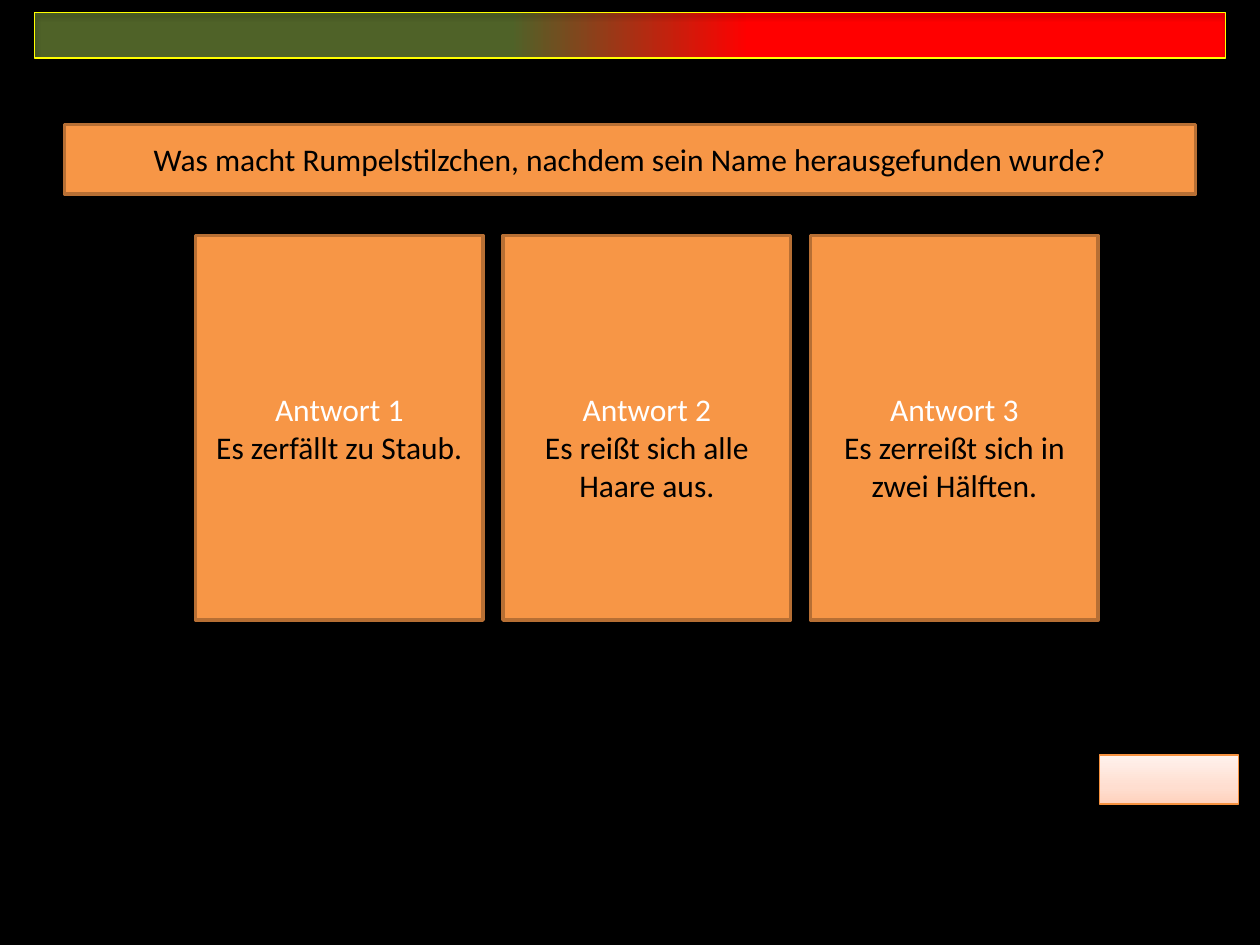
from dataclasses import dataclass

from lxml.etree import SubElement
from pptx import Presentation
from pptx.dml.color import RGBColor
from pptx.enum.shapes import MSO_SHAPE
from pptx.enum.text import MSO_ANCHOR, PP_ALIGN
from pptx.oxml.ns import qn
from pptx.util import Cm, Pt


@dataclass(frozen=True)
class Theme:
    font: str = "Calibri"
    text_size: float = 18
    background: str = "000000"
    dark_text: str = "000000"
    light_text: str = "FFFFFF"
    panel: str = "F79646"
    panel_line: str = "B76F34"
    panel_line_width: float = 2
    bar_stops: tuple = ((40, "4F6228"), (60, "FF0000"))
    bar_line: str = "FFFF00"
    button_stops: tuple = ((0, "FFD2BD"), (35, "FFDED0"), (100, "FFF2ED"))
    button_line: str = "F69240"
    thin_line_width: float = 0.75
    shadow: str = "000000"


THEME = Theme()
QUESTION = "Was macht Rumpelstilzchen, nachdem sein Name herausgefunden wurde?"
ANSWERS = (
    "Es zerfällt zu Staub.",
    "Es reißt sich alle Haare aus.",
    "Es zerreißt sich in zwei Hälften.",
)


def add_rectangle(slide, left, top, width, height):
    shape = slide.shapes.add_shape(
        MSO_SHAPE.RECTANGLE, Cm(left), Cm(top), Cm(width), Cm(height)
    )
    shape.shadow.inherit = False
    shape.fill.background()
    shape.line.fill.background()
    return shape


def set_line(shape, color, width):
    shape.line.color.rgb = RGBColor.from_string(color)
    shape.line.width = Pt(width)


def set_panel_style(shape):
    shape.fill.solid()
    shape.fill.fore_color.rgb = RGBColor.from_string(THEME.panel)
    set_line(shape, THEME.panel_line, THEME.panel_line_width)


def set_gradient(shape, stops, angle):
    shape.fill.gradient()
    shape.fill.gradient_angle = angle
    stop_list = shape._element.spPr.find(qn("a:gradFill")).find(qn("a:gsLst"))
    stop_list.clear()
    for position, color in stops:
        stop = SubElement(stop_list, qn("a:gs"), pos=str(position * 1000))
        SubElement(stop, qn("a:srgbClr"), val=color)


def set_shadow(shape, opacity, blur, distance):
    effects = shape._element.spPr.find(qn("a:effectLst"))
    shadow = SubElement(
        effects,
        qn("a:outerShdw"),
        blurRad=str(Pt(blur)),
        dist=str(Pt(distance)),
        dir="5400000",
        rotWithShape="0",
    )
    color = SubElement(shadow, qn("a:srgbClr"), val=THEME.shadow)
    SubElement(color, qn("a:alpha"), val=str(opacity * 1000))


def write_text(paragraph, text, *, color, size=THEME.text_size, alignment=PP_ALIGN.CENTER):
    paragraph.alignment = alignment
    run = paragraph.add_run()
    run.text = text
    run.font.name = THEME.font
    run.font.size = Pt(size)
    run.font.color.rgb = RGBColor.from_string(color)


def add_progress_bar(slide, left, top, width, height):
    bar = add_rectangle(slide, left, top, width, height)
    set_gradient(bar, THEME.bar_stops, 0)
    frame = add_rectangle(slide, left, top, width, height)
    set_line(frame, THEME.bar_line, THEME.thin_line_width)
    for shape in (bar, frame):
        set_shadow(shape, opacity=35, blur=3.1, distance=1.8)


def place_question(slide, left, top, width, height):
    title = slide.shapes.title
    title.left, title.top = Cm(left), Cm(top)
    title.width, title.height = Cm(width), Cm(height)
    set_panel_style(title)
    text_frame = title.text_frame
    text_frame.vertical_anchor = MSO_ANCHOR.MIDDLE
    write_text(text_frame.paragraphs[0], QUESTION, color=THEME.dark_text)


def add_answer_card(slide, number, answer, left, top, width, height, text_offset):
    card = add_rectangle(slide, left, top, width, height)
    set_panel_style(card)
    text_frame = card.text_frame
    text_frame.word_wrap = True
    text_frame.vertical_anchor = MSO_ANCHOR.MIDDLE
    text_frame.margin_top += Cm(text_offset)
    write_text(text_frame.paragraphs[0], f"Antwort {number}", color=THEME.light_text)
    write_text(text_frame.add_paragraph(), answer, color=THEME.dark_text)


def add_answers(slide, left, top, width, height):
    card_width = 5.8
    pitch = (width - card_width) / (len(ANSWERS) - 1)
    for index, answer in enumerate(ANSWERS):
        text_offset = 0.77 if index else 0
        add_answer_card(
            slide, index + 1, answer,
            left + index * pitch, top, card_width, height, text_offset,
        )


def add_button(slide, left, top, width, height):
    button = add_rectangle(slide, left, top, width, height)
    set_gradient(button, THEME.button_stops, 90)
    set_line(button, THEME.button_line, THEME.thin_line_width)
    set_shadow(button, opacity=38, blur=3.1, distance=1.6)


def main():
    presentation = Presentation()
    presentation.slide_width, presentation.slide_height = Cm(25.4), Cm(19.05)
    slide = presentation.slides.add_slide(presentation.slide_layouts[5])
    slide.background.fill.solid()
    slide.background.fill.fore_color.rgb = RGBColor.from_string(THEME.background)
    add_progress_bar(slide, 0.7, 0.25, 24, 0.92)
    place_question(slide, 1.3, 2.51, 22.8, 1.4)
    add_button(slide, 22.17, 15.22, 2.8, 0.99)
    add_answers(slide, 3.94, 4.75, 18.2, 7.75)
    presentation.save("out.pptx")


if __name__ == "__main__":
    main()
